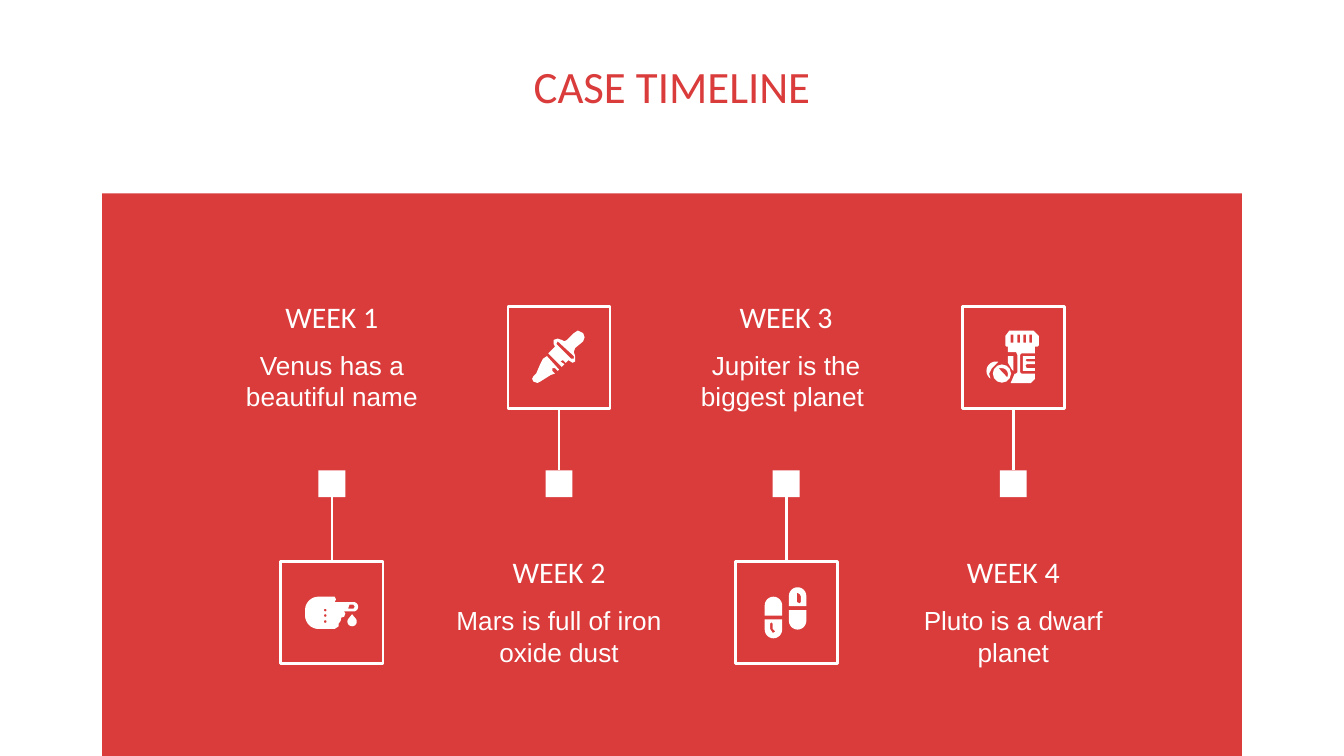
from math import cos, radians, sin

from lxml.etree import SubElement
from pptx import Presentation
from pptx.dml.color import RGBColor
from pptx.enum.shapes import MSO_CONNECTOR, MSO_SHAPE
from pptx.enum.text import MSO_ANCHOR, PP_ALIGN
from pptx.oxml.ns import qn
from pptx.util import Inches, Pt


def arc(x, y, r, start, end):
    turns = [radians(start + (end - start) * k / 12) for k in range(13)]
    return [(x + r * cos(t), y + r * sin(t)) for t in turns]


def dot(x, y, r):
    return arc(x, y, r, 0, 360)


def slit(x):
    return [(x, 21), (x + 2, 21), (x + 2, 27), (x, 27)]


def cap(x, y, end):
    return arc(x, y, 6.5, 180, 360) + [(x + 6.5, end), (x - 6.5, end)]


def cup(x, y, top):
    return [(x - 6.5, top), (x + 6.5, top)] + arc(x, y, 6.5, 0, 180)


HAND = [
    [[(53, 39)] + arc(53, 44.5, 3.5, -30, 210)],
    [arc(28, 36, 10, 180, 270) + [(40, 26), (41, 28), (40, 30)]
     + arc(54, 33.5, 3.5, -90, 90)
     + [(47, 37), (48, 38.5), (47, 41), (45, 41.5), (44.5, 44), (43, 46),
        (43, 48), (40, 50)] + arc(28, 40, 10, 90, 180),
     [(50, 35), (51, 32), (54, 32), (55, 33.5), (54, 35)],
     dot(33, 36, 1), dot(33, 40, 1), dot(33, 44.5, 1)],
]
DROPPER = [
    [[(29, 37), (26, 39), (24, 43), (21, 50), (19, 52), (18, 54), (19, 56),
      (22, 57), (24, 56), (32, 51), (35, 50), (33, 48), (33, 46), (35, 46),
      (37, 48), (38, 47)]],
    [[(30, 35), (35, 30), (34, 28), (34, 25), (37, 24), (40, 25), (42, 26),
      (44, 25), (49, 20), (52, 18), (56, 20), (57, 23), (56, 26), (50, 31),
      (49, 34), (50, 37), (50, 41), (48, 42), (45, 40), (43, 42), (41, 40),
      (39, 41), (42, 43), (40, 45)],
     [(37, 26), (36, 28), (47, 39), (49, 39), (49, 37)]],
]
PILLS = [
    [cap(28.5, 32.5, 40)],
    [cup(46.5, 44, 36)],
    [cup(28.5, 50.5, 43),
     [(26, 46), (27, 45), (28, 46), (28, 50), (30, 52), (28, 53), (26, 50)]],
    [cap(46.5, 25.5, 33),
     [(46, 23), (48, 24), (49, 26), (49, 30), (48, 31), (46, 30), (46, 25)]],
]
BOTTLE = [
    [[(45, 37), (54, 37), (54, 39), (48, 39), (47, 40), (48, 41), (54, 41),
      (54, 43), (48, 43), (47, 44), (48, 46), (54, 46), (54, 48), (45, 48)]],
    [[(35, 18), (53, 18), (57, 22), (57, 29), (56, 30), (54, 30), (54, 35),
      (44, 35), (43, 36), (43, 49), (44, 50), (54, 50), (54, 54), (51, 57),
      (36, 57), (39, 50), (40, 50), (41, 49), (41, 36), (40, 34), (34, 34),
      (34, 30), (33, 30), (32, 29), (32, 22)],
     slit(36), slit(41), slit(45.5), slit(50)],
    [arc(25, 48, 7, 125, 285) + [(22, 46), (20, 50)]],
    [dot(29.5, 50, 6.8), [(27, 46)] + arc(29.5, 50.5, 4.5, -90, 30)],
    [[(34, 37), (38, 37), (38, 48), (37, 47), (34, 42)]],
]
TITLE = "CASE TIMELINE"
WEEKS = [
    ("WEEK 1", "Venus has a beautiful name", HAND),
    ("WEEK 2", "Mars is full of iron oxide dust", DROPPER),
    ("WEEK 3", "Jupiter is the biggest planet ", PILLS),
    ("WEEK 4", "Pluto is a dwarf planet", BOTTLE),
]
COLORS = {"red": "DA3B3B", "white": "FFFFFF"}
WIDE = 10
HIGH = WIDE * 9 / 16
FIRST, STEP = 2.47, 1.69
TEXT, BOX, MARK = 1.97, 0.76, 0.2
HEADS, BOXES, MIDDLE = (2.12, 4.02), (4.18, 2.28), 3.5

deck = Presentation()
deck.slide_width, deck.slide_height = Inches(WIDE), Inches(HIGH)
slide = deck.slides.add_slide(deck.slide_layouts[6])
shapes = slide.shapes


def tint(name):
    return RGBColor.from_string(COLORS[name])


def paint(shape, fill=None, line=None):
    shape.shadow.inherit = False
    if fill:
        shape.fill.solid()
        shape.fill.fore_color.rgb = tint(fill)
    else:
        shape.fill.background()
    if line:
        shape.line.color.rgb = tint(line)
        shape.line.width = Pt(1.5)
    else:
        shape.line.fill.background()


def block(x, y, w, h, fill=None, line=None):
    area = [Inches(v) for v in (x, y, w, h)]
    paint(shapes.add_shape(MSO_SHAPE.RECTANGLE, *area), fill, line)


def write(text, x, y, w, h, size, font, color):
    frame = shapes.add_textbox(*[Inches(v) for v in (x, y, w, h)]).text_frame
    frame.word_wrap = True
    frame.vertical_anchor = MSO_ANCHOR.TOP
    frame.margin_left = frame.margin_right = Inches(0.1)
    frame.margin_top = frame.margin_bottom = Inches(0.1)
    para = frame.paragraphs[0]
    para.alignment = PP_ALIGN.CENTER
    run = para.add_run()
    run.text = text
    run.font.size, run.font.name = Pt(size), font
    run.font.color.rgb = tint(color)


def link(x, top, end):
    ends = [Inches(v) for v in (x, top, x, end)]
    line = shapes.add_connector(MSO_CONNECTOR.STRAIGHT, *ends)
    line.line.color.rgb = tint("white")
    line.line.width = Pt(1.5)
    SubElement(line._element.spPr, qn("a:effectLst"))


def draw(icon, x, y):
    for part in icon:
        rings = [[(Inches(x + a / 100), Inches(y + b / 100))
                  for a, b in ring] for ring in part]
        pen = shapes.build_freeform(*rings[0][0])
        pen.add_line_segments(rings[0][1:], close=True)
        for ring in rings[1:]:
            pen.move_to(*ring[0])
            pen.add_line_segments(ring[1:], close=True)
        paint(pen.convert_to_shape(), "white")


block(0.76, 1.44, WIDE - 2 * 0.76, HIGH - 1.44, "red")
write(TITLE, 1.17, 0.34, WIDE - 2 * 1.17, 0.63, 24, "Calibri", "red")
for col, (head, body, icon) in enumerate(WEEKS):
    mid = FIRST + col * STEP
    row = col % 2
    top, box = HEADS[row], BOXES[row]
    left, edge = mid - TEXT / 2, mid - BOX / 2
    write(head, left, top, TEXT, 0.38, 16, "Calibri", "white")
    write(body, left, top + 0.38, TEXT, 0.87, 14, "Arial", "white")
    block(mid - MARK / 2, MIDDLE, MARK, MARK, "white")
    block(edge, box, BOX, BOX, line="white")
    if row:
        link(mid, box + BOX, MIDDLE)
    else:
        link(mid, MIDDLE + MARK, box)
    draw(icon, edge, box)

deck.save("out.pptx")
